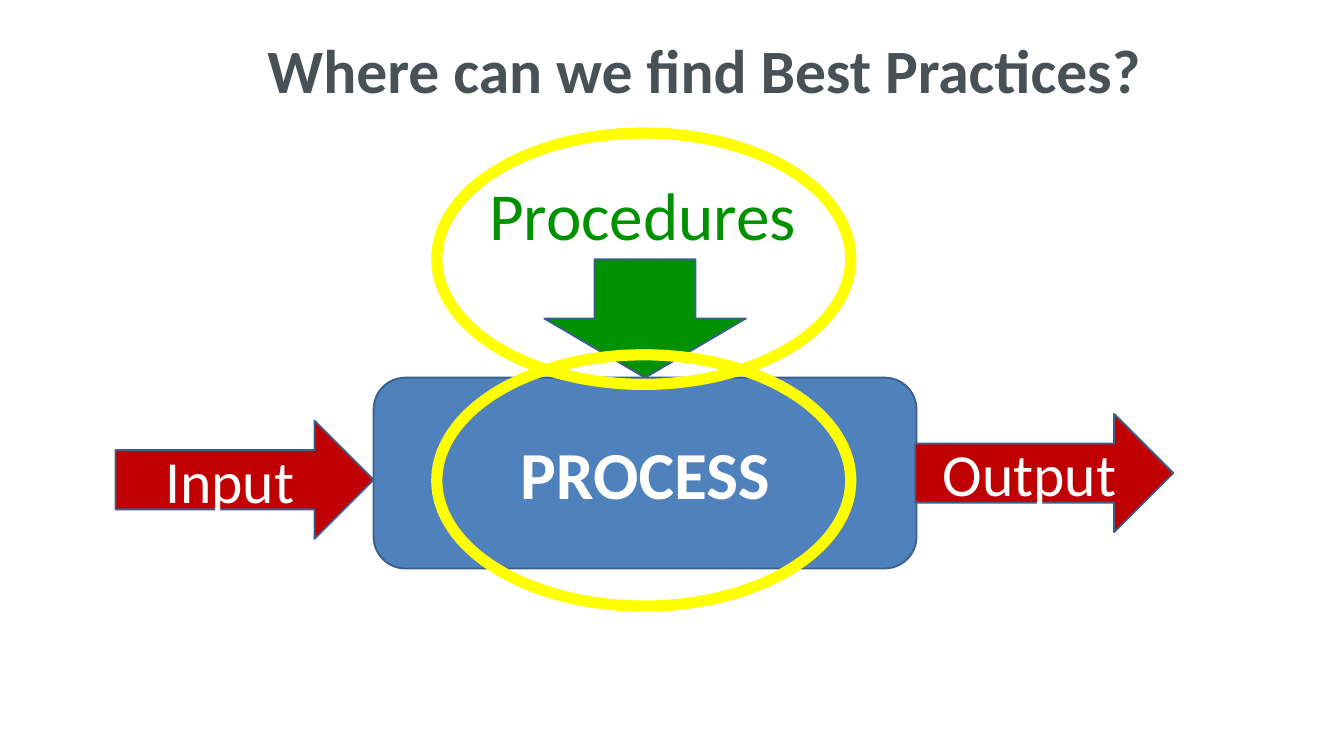
from pptx import Presentation
from pptx.dml.color import RGBColor
from pptx.enum.shapes import MSO_SHAPE
from pptx.enum.text import MSO_ANCHOR, MSO_AUTO_SIZE, PP_ALIGN
from pptx.util import Inches, Pt

FONT = "Calibri"
GREEN, RED, BLUE = "009100", "C00000", "4F81BD"
OUTLINE, YELLOW, WHITE, GREY = "3A5F8C", "FFFF00", "FFFFFF", "485156"


def rgb(value):
    return RGBColor.from_string(value)


def set_text(shape, text, size, color, bold=False, align=PP_ALIGN.CENTER):
    tf = shape.text_frame
    tf.text = text
    p = tf.paragraphs[0]
    p.alignment = align
    font = p.runs[0].font
    font.name, font.size, font.bold = FONT, Pt(size), bold
    font.color.rgb = rgb(color)


def add_title(slide, text):
    title = slide.shapes.title
    title.left, title.top = Inches(1.89), Inches(0)
    title.width, title.height = Inches(7.7), Inches(1.09)
    set_text(title, text, 33, GREY, bold=True, align=PP_ALIGN.LEFT)
    tf = title.text_frame
    tf.auto_size = MSO_AUTO_SIZE.NONE
    tf.vertical_anchor = MSO_ANCHOR.MIDDLE
    tf.paragraphs[0].line_spacing = 0.9


def add_shape(slide, kind, box, fill=None, line=OUTLINE, line_width=1):
    """Add a preset shape; without a fill colour it is left hollow."""
    sp = slide.shapes.add_shape(kind, *map(Inches, box))
    sp.shadow.inherit = False
    if fill:
        sp.fill.solid()
        sp.fill.fore_color.rgb = rgb(fill)
    else:
        sp.fill.background()
    sp.line.color.rgb = rgb(line)
    sp.line.width = Pt(line_width)
    return sp


def add_flow_arrow(slide, text, left, top):
    arrow = add_shape(slide, MSO_SHAPE.RIGHT_ARROW, (left, top, 1.92, 0.88), RED)
    set_text(arrow, text, 32, WHITE)


def add_label(slide, text, box, size, color):
    label = slide.shapes.add_textbox(*map(Inches, box))
    label.text_frame.word_wrap = False
    label.text_frame.auto_size = MSO_AUTO_SIZE.SHAPE_TO_FIT_TEXT
    set_text(label, text, size, color, align=PP_ALIGN.LEFT)


def add_highlight(slide, top):
    add_shape(slide, MSO_SHAPE.OVAL, (3.25, top, 3.08, 1.87), line=YELLOW, line_width=6)


def main():
    prs = Presentation()
    prs.slide_width = Inches(10)
    prs.slide_height = Inches(10) * 9 // 16
    slide = prs.slides.add_slide(prs.slide_layouts[5])
    add_title(slide, "Where can we find Best Practices?")

    process = add_shape(slide, MSO_SHAPE.ROUNDED_RECTANGLE, (2.78, 2.81, 4.04, 1.42), BLUE)
    set_text(process, "PROCESS", 36, WHITE, bold=True)
    add_flow_arrow(slide, "Input", 0.86, 3.13)
    add_flow_arrow(slide, "Output", 6.81, 3.08)

    add_shape(slide, MSO_SHAPE.DOWN_ARROW, (4.05, 1.93, 1.5, 0.88), GREEN)
    add_label(slide, "Procedures", (3.54, 1.24, 2.51, 0.71), 36, GREEN)
    for top in (2.64, 0.99):
        add_highlight(slide, top)

    prs.save("out.pptx")


if __name__ == "__main__":
    main()
